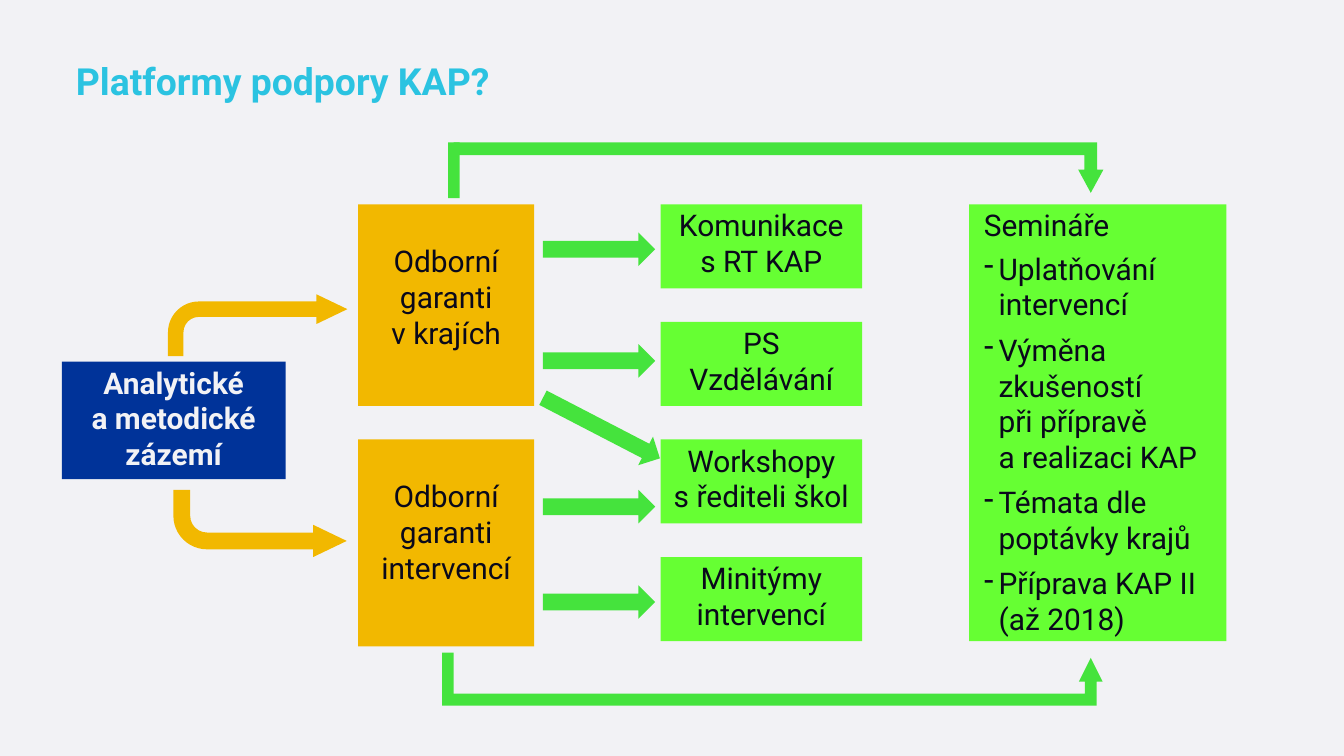
from lxml.etree import SubElement
from pptx import Presentation
from pptx.dml.color import RGBColor
from pptx.enum.shapes import MSO_SHAPE
from pptx.enum.text import MSO_ANCHOR, PP_ALIGN
from pptx.oxml.ns import qn
from pptx.util import Inches, Pt

PAPER = RGBColor(0xF2, 0xF2, 0xF5)
CYAN = RGBColor(0x2B, 0xC3, 0xE1)
NAVY = RGBColor(0x00, 0x33, 0x99)
AMBER = RGBColor(0xF2, 0xB8, 0x00)
LIME = RGBColor(0x66, 0xFF, 0x33)
GREEN = RGBColor(0x45, 0xE3, 0x3D)
INK = RGBColor(0x0A, 0x09, 0x1B)

ROW_TOP, ROW_PITCH = 3.04, 1.75
LINE_HEIGHT = 0.53
DASH_INDENT = 0.22

TITLE_FONT = {"name": "Roboto", "size": Pt(40), "bold": True}
BODY_FONT = {"name": "Roboto", "size": Pt(32), "bold": False}
STRONG_FONT = {**BODY_FONT, "bold": True}
BOX_FRAME = {
    "word_wrap": True,
    "vertical_anchor": MSO_ANCHOR.TOP,
    "margin_left": 0,
    "margin_right": 0,
    "margin_top": Inches(0.04),
    "margin_bottom": Inches(0.01),
}

ACTIVITIES = [
    ["Komunikace", "s RT KAP"],
    ["PS", "Vzdělávání"],
    ["Workshopy", "s řediteli škol"],
    ["Minitýmy intervencí"],
]
SEMINAR_TOPICS = [
    ("Uplatňování\vintervencí", 8),
    ("Výměna\vzkušeností\vpři přípravě\va realizaci KAP", 10),
    ("Témata dle\vpoptávky krajů", 10),
    ("Příprava KAP II\v(až 2018)", 10),
]


def apply_format(target, values):
    """Set each attribute named in values on target."""
    for name, value in values.items():
        setattr(target, name, value)


def add_title(slide, wording):
    """Place and format the title placeholder."""
    title = slide.shapes.title
    apply_format(title, {"left": Inches(1.03), "top": Inches(0.88),
                         "width": Inches(18.05), "height": Inches(0.71)})
    title.text_frame.text = wording
    title.text_frame.vertical_anchor = MSO_ANCHOR.MIDDLE
    heading = title.text_frame.paragraphs[0]
    apply_format(heading, {"alignment": PP_ALIGN.LEFT, "line_spacing": 0.9})
    apply_format(heading.font, TITLE_FONT)
    heading.font.color.rgb = CYAN


def add_figure(slide, preset, place, color, adjustments=(), flipped=False, rotation=0):
    """Add a flat, borderless preset shape."""
    figure = slide.shapes.add_shape(preset, *map(Inches, place))
    figure.shadow.inherit = False
    figure.fill.solid()
    figure.fill.fore_color.rgb = color
    figure.line.fill.background()
    figure.rotation = rotation
    for index, value in enumerate(adjustments):
        figure.adjustments[index] = value
    if flipped:
        figure.element.spPr.find(qn("a:xfrm")).set("flipV", "1")
    return figure


def write_paragraph(paragraph, wording, font, color, alignment):
    """Fill and format one paragraph."""
    paragraph.text = wording
    paragraph.alignment = alignment
    apply_format(paragraph.font, font)
    paragraph.font.color.rgb = color


def add_box(slide, place, fill, lines, font=BODY_FONT, color=INK,
            alignment=PP_ALIGN.CENTER, **frame_changes):
    """Add a filled rectangle with one paragraph per line."""
    frame = add_figure(slide, MSO_SHAPE.RECTANGLE, place, fill).text_frame
    apply_format(frame, {**BOX_FRAME, **frame_changes})
    for index, wording in enumerate(lines):
        paragraph = frame.add_paragraph() if index else frame.paragraphs[0]
        write_paragraph(paragraph, wording, font, color, alignment)
    return frame


def add_dash_item(frame, wording, space_before):
    """Append a paragraph with a hanging dash bullet."""
    item = frame.add_paragraph()
    write_paragraph(item, wording, BODY_FONT, INK, PP_ALIGN.LEFT)
    item.space_before = Pt(space_before)
    properties = item._p.get_or_add_pPr()
    properties.set("marL", str(Inches(DASH_INDENT)))
    properties.set("indent", str(-Inches(DASH_INDENT)))
    bullet = SubElement(properties, qn("a:buChar"))
    bullet.set("char", "-")
    properties.find(qn("a:defRPr")).addprevious(bullet)


def add_boxes(slide):
    """Add the background team, guarantors, activities and seminars."""
    add_box(slide, (0.92, 5.38, 3.33, 1.75), NAVY,
            ["Analytické", "a metodické zázemí"], STRONG_FONT, PAPER)
    guarantors = [(ROW_TOP, 3, "v krajích"), (ROW_TOP + 2 * ROW_PITCH, 3.08, "intervencí")]
    for top, height, area in guarantors:
        add_box(slide, (5.33, top, 2.62, height), AMBER, ["Odborní garanti", area],
                margin_top=Inches(0.04 + LINE_HEIGHT))
    for row, lines in enumerate(ACTIVITIES):
        add_box(slide, (9.83, ROW_TOP + row * ROW_PITCH, 3, 1.25), LIME, lines)
    seminars = add_box(slide, (14.42, ROW_TOP, 3.83, 6.5), LIME, ["Semináře"],
                       alignment=PP_ALIGN.LEFT, margin_left=Inches(DASH_INDENT))
    for wording, space_before in SEMINAR_TOPICS:
        add_dash_item(seminars, wording, space_before)


def add_arrows(slide):
    """Add the arrows that join the boxes."""
    for top in (3.46, 5.12, 7.29, 8.71):
        add_figure(slide, MSO_SHAPE.RIGHT_ARROW, (8.08, top, 1.67, 0.5), GREEN)
    add_figure(slide, MSO_SHAPE.RIGHT_ARROW, (7.97, 6.13, 1.96, 0.48), GREEN, rotation=27.4)

    add_figure(slide, MSO_SHAPE.BENT_UP_ARROW, (6.75, 2.12, 9.67, 0.75), GREEN,
               (0.25, 0.25, 0.46), flipped=True)
    add_figure(slide, MSO_SHAPE.BENT_UP_ARROW, (6.58, 9.79, 9.83, 0.71), GREEN,
               (0.25, 0.25, 0.5))
    for stem in ((6.67, 2.12, 0.17, 0.83), (6.58, 9.71, 0.17, 0.75)):
        add_figure(slide, MSO_SHAPE.RECTANGLE, stem, GREEN)

    bends = [((2.5, 4.38, 2.67, 0.92), False), ((2.58, 7.29, 2.58, 1), True)]
    for place, flipped in bends:
        add_figure(slide, MSO_SHAPE.BENT_ARROW, place, AMBER,
                   (0.25, 0.24, 0.5, 0.5), flipped)


def main():
    """Build the slide and save it."""
    deck = Presentation()
    apply_format(deck, {"slide_width": Inches(20), "slide_height": Inches(11.25)})
    slide = deck.slides.add_slide(deck.slide_layouts[5])
    slide.background.fill.solid()
    slide.background.fill.fore_color.rgb = PAPER
    add_title(slide, "Platformy podpory KAP?")
    add_boxes(slide)
    add_arrows(slide)
    deck.save("out.pptx")


if __name__ == "__main__":
    main()
